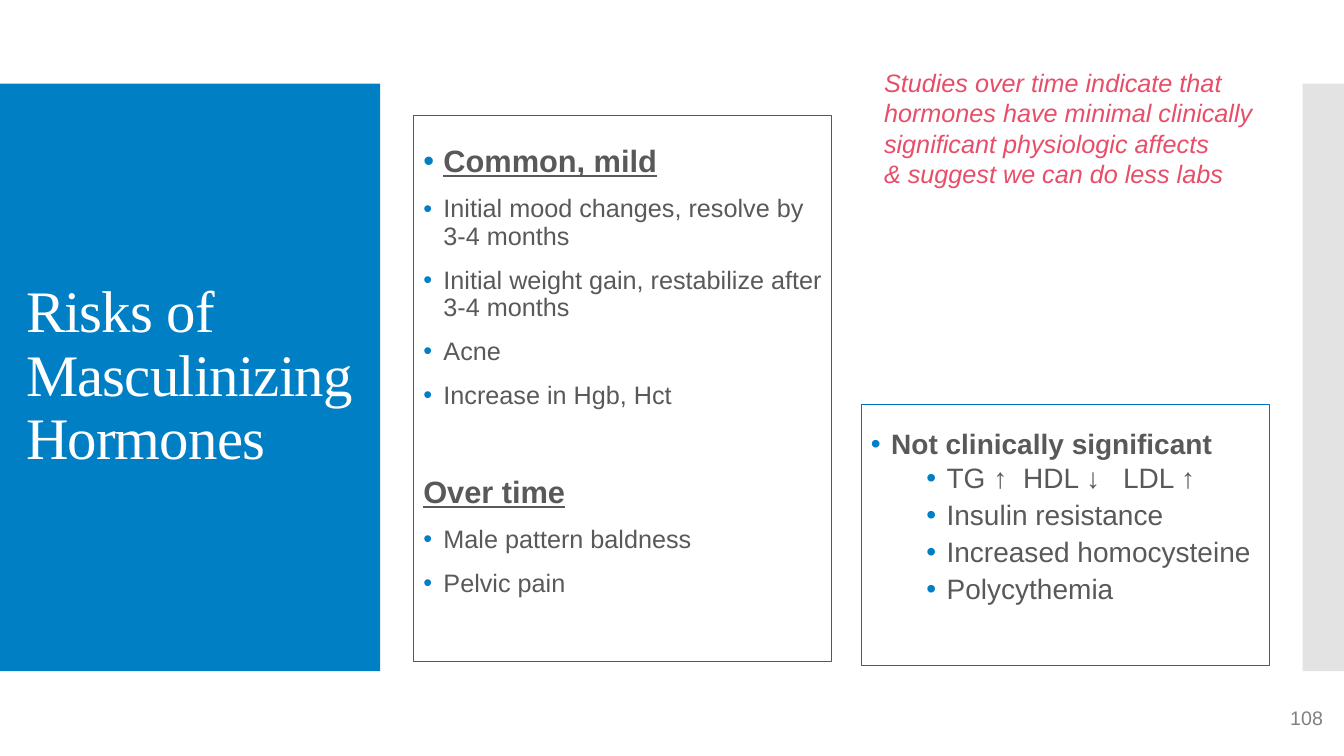
from dataclasses import dataclass

from lxml.etree import SubElement as Sub
from pptx import Presentation
from pptx.dml.color import RGBColor as RGB
from pptx.enum.shapes import MSO_SHAPE as Shape
from pptx.enum.text import MSO_ANCHOR as Anchor, PP_ALIGN as Align
from pptx.oxml.ns import qn
from pptx.util import Inches, Pt


@dataclass(frozen=True)
class Theme:
    sans: str = "Arial"
    serif: str = "Times New Roman"
    blue: str = "007FC4"
    edge: str = "0070C0"
    grey: str = "C8C8C8"
    text: str = "595959"
    rose: str = "E84D69"
    page: str = "808080"
    white: str = "FFFFFF"
    title: int = 42
    head: int = 22
    mid: int = 20
    body: int = 18
    small: int = 14


THEME = Theme()

# Paragraph formats: font, spacing and bullet indent (left edge of text)
HEAD = dict(font=dict(size=Pt(THEME.head), bold=True, underline=True))
ITEM = dict(font=dict(size=Pt(THEME.body)), para=dict(space_before=Pt(12)), left=0.2)
LEAD = dict(font=dict(size=Pt(THEME.mid), bold=True), left=0.2)
SUB = dict(font=dict(size=Pt(THEME.mid)), left=0.75,
           para=dict(space_before=Pt(2.5), space_after=Pt(2.5), level=1))

COMMON = [
    ("Common, mild", HEAD | dict(left=0.2)),
    ("Initial mood changes, resolve by 3-4 months", ITEM),
    ("Initial weight gain, restabilize after 3-4 months", ITEM),
    ("Acne", ITEM),
    ("Increase in Hgb, Hct", ITEM),
    ("Over time", HEAD | dict(para=dict(space_before=Pt(48)))),
    ("Male pattern baldness", ITEM),
    ("Pelvic pain", ITEM),
]
MINOR = [
    ("Not clinically significant", LEAD),
    ("TG ↑\tHDL ↓\tLDL ↑", SUB | dict(tabs=(1.51, 2.5))),
    ("Insulin resistance", SUB),
    ("Increased homocysteine", SUB),
    ("Polycythemia", SUB),
]


def apply(item, values):
    for name, value in values.items():
        setattr(item, name, value)


def add_band(slide, box, color, alpha=None):
    """Plain filled rectangle, optionally see-through (alpha in percent)."""
    band = slide.shapes.add_shape(Shape.RECTANGLE, *map(Inches, box))
    band.shadow.inherit = False
    band.line.fill.background()
    band.fill.solid()
    band.fill.fore_color.rgb = RGB.from_string(color)
    if alpha:
        tint = band.fill._xPr.find(qn("a:solidFill"))[0]
        Sub(tint, qn("a:alpha"), val=str(alpha * 1000))


def add_bullet(para, left, tabs=()):
    """Hanging blue bullet, with tab stops where given."""
    props = para._p.get_or_add_pPr()
    props.set("marL", str(Inches(left)))
    props.set("indent", str(-Inches(0.2)))
    color = Sub(props, qn("a:buClr"))
    Sub(color, qn("a:srgbClr"), val=THEME.blue)
    Sub(props, qn("a:buFont"), typeface=THEME.sans)
    Sub(props, qn("a:buChar"), char="•")
    if tabs:
        stops = Sub(props, qn("a:tabLst"))
        for stop in tabs:
            Sub(stops, qn("a:tab"), pos=str(Inches(stop)), algn="l")


def add_text(slide, box, text, font, para=None, anchor=Anchor.TOP):
    """Text box holding one paragraph."""
    label = slide.shapes.add_textbox(*map(Inches, box))
    frame = label.text_frame
    apply(frame, dict(word_wrap=True, vertical_anchor=anchor))
    first = frame.paragraphs[0]
    first.text = text
    apply(first, para or {})
    color = RGB.from_string(font.pop("color"))
    for run in first.runs:
        apply(run.font, font)
        run.font.color.rgb = color
    return first


def add_panel(slide, box, inset, rows):
    """Outlined box with a list of formatted rows."""
    panel = slide.shapes.add_textbox(*map(Inches, box))
    panel.line.color.rgb = RGB.from_string(THEME.edge)
    panel.line.width = Pt(0.75)
    frame = panel.text_frame
    apply(frame, dict(word_wrap=True, margin_top=Inches(inset)))
    for num, (text, style) in enumerate(rows):
        para = frame.add_paragraph() if num else frame.paragraphs[0]
        apply(para, dict(line_spacing=0.9) | style.get("para", {}))
        if "left" in style:
            add_bullet(para, style["left"], style.get("tabs", ()))
        run = para.add_run()
        run.text = text
        apply(run.font, dict(name=THEME.sans) | style["font"])
        run.font.color.rgb = RGB.from_string(THEME.text)


def main():
    deck = Presentation()
    apply(deck, dict(slide_width=Inches(13.33), slide_height=Inches(7.5)))
    slide = deck.slides.add_slide(deck.slide_layouts[6])

    # Side bands
    add_band(slide, (0, 0.83, 3.77, 5.83), THEME.blue)
    add_band(slide, (12.92, 0.83, 0.41, 5.83), THEME.grey, alpha=50)

    # Title, set slightly tight
    title = add_text(slide, (0.16, 1.23, 3.66, 5.03), "Risks of Masculinizing Hormones",
                     dict(name=THEME.serif, size=Pt(THEME.title), color=THEME.white),
                     dict(line_spacing=0.9), Anchor.MIDDLE)
    title.runs[0].font._element.set("spc", "-60")

    # Risk lists
    add_panel(slide, (4.1, 1.15, 4.15, 5.41), 0.3, COMMON)
    add_panel(slide, (8.54, 4.01, 4.05, 2.59), 0.26, MINOR)

    # Remark and page number
    add_text(slide, (8.67, 0.62, 3.93, 1.62),
             "Studies over time indicate that hormones have minimal clinically "
             "significant physiologic affects\v& suggest we can do less labs",
             dict(name=THEME.sans, size=Pt(THEME.body), italic=True, color=THEME.rose))
    add_text(slide, (9.42, 6.95, 3.8, 0.4), "108",
             dict(name=THEME.sans, size=Pt(THEME.small), color=THEME.page),
             dict(alignment=Align.RIGHT))

    deck.save("out.pptx")


if __name__ == "__main__":
    main()
